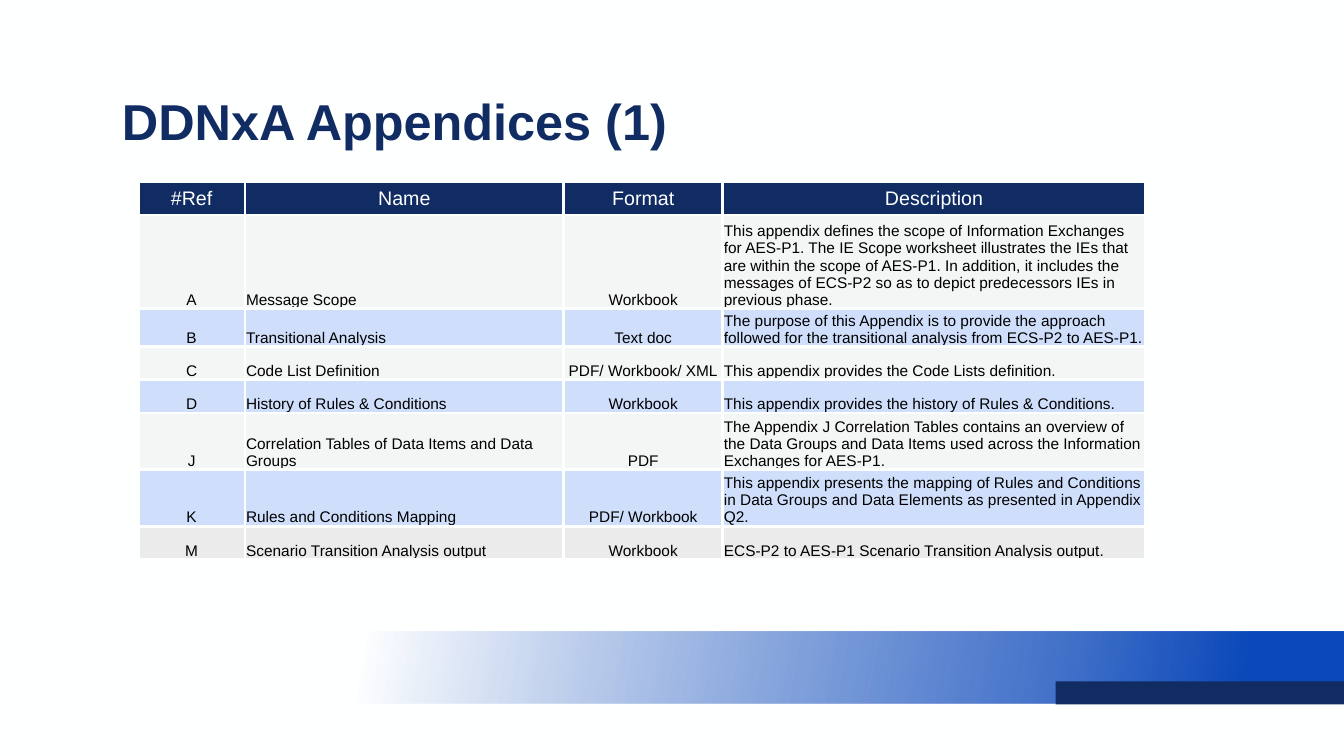
from dataclasses import dataclass

from lxml.etree import SubElement
from pptx import Presentation
from pptx.dml.color import RGBColor
from pptx.enum.shapes import MSO_SHAPE as Shape
from pptx.enum.text import MSO_ANCHOR as Anchor, PP_ALIGN as Align
from pptx.oxml.ns import qn
from pptx.util import Emu, Inches, Pt


@dataclass(frozen=True)
class Theme:
    """Colours, type sizes and line widths of the deck."""
    font: str = "Arial"
    paper: str = "FEFFFF"
    navy: str = "112C63"
    blue: str = "0C49BA"
    mid_blue: str = "3265C5"
    grey: str = "E7E6E6"
    pale_blue: str = "C4D8FB"
    ink: str = "000000"
    title_size: int = 36
    header_size: int = 14
    body_size: int = 11
    rule: float = 2.25


@dataclass(frozen=True)
class Box:
    """A rectangle in EMU."""
    left: int
    top: int
    width: int
    height: int

    def inner(self, left, top, width, height):
        """Return the box at the given percentages of this one."""
        return Box(Emu(int(self.left + self.width * left / 100)),
                   Emu(int(self.top + self.height * top / 100)),
                   Emu(int(self.width * width / 100)),
                   Emu(int(self.height * height / 100)))

    def frame(self):
        """Return left, top, width and height."""
        return self.left, self.top, self.width, self.height


THEME = Theme()
COLUMN_SHARES = (1.06, 3.16, 1.58, 4.19)
HEADINGS = ("#Ref", "Name", "Format", "Description")
APPENDICES = (
    ("A", "Message Scope", "Workbook",
     "This appendix defines the scope of Information Exchanges for AES-P1. "
     "The IE Scope worksheet illustrates the IEs that are within the scope of "
     "AES-P1. In addition, it includes the messages of ECS-P2 so as to depict "
     "predecessors IEs in previous phase."),
    ("B", "Transitional Analysis", "Text doc",
     "The purpose of this Appendix is to provide the approach followed for the "
     "transitional analysis from ECS-P2 to AES-P1."),
    ("C", "Code List Definition", "PDF/ Workbook/ XML",
     "This appendix provides the Code Lists definition."),
    ("D", "History of Rules & Conditions", "Workbook",
     "This appendix provides the history of Rules & Conditions."),
    ("J", "Correlation Tables of Data Items and Data Groups", "PDF",
     "The Appendix J Correlation Tables contains an overview of the Data Groups "
     "and Data Items used across the Information Exchanges for AES-P1."),
    ("K", "Rules and Conditions Mapping", "PDF/ Workbook",
     "This appendix presents the mapping of Rules and Conditions in Data Groups "
     "and Data Elements as presented in Appendix Q2."),
    ("M", "Scenario Transition Analysis output", "Workbook",
     "ECS-P2 to AES-P1 Scenario Transition Analysis output."),
)


def style_text(paragraph, size, color, bold=False, align=Align.LEFT):
    """Format every run of a paragraph."""
    paragraph.alignment = align
    for run in paragraph.runs:
        run.font.name = THEME.font
        run.font.size = Pt(size)
        run.font.bold = bold
        run.font.color.rgb = RGBColor.from_string(color)


def add_color(parent, color, opacity=100):
    """Append a colour element with its opacity in percent."""
    tint = SubElement(parent, qn("a:srgbClr"), val=color)
    if opacity < 100:
        SubElement(tint, qn("a:alpha"), val=str(opacity * 1000))


def add_bar(slide, box):
    """Add a plain rectangle without line or shadow."""
    bar = slide.shapes.add_shape(Shape.RECTANGLE, *box.frame())
    bar.shadow.inherit = False
    bar.line.fill.background()
    return bar


def add_footer(slide, box):
    """Draw the fading band and its navy corner block."""
    band = add_bar(slide, box)
    band.fill.gradient()
    gradient = band._element.spPr.find(qn("a:gradFill"))
    for child in list(gradient):
        gradient.remove(child)
    stops = SubElement(gradient, qn("a:gsLst"))
    for place, color, opacity in ((5, THEME.blue, 0), (72, THEME.mid_blue, 91),
                                  (90, THEME.blue, 100)):
        stop = SubElement(stops, qn("a:gs"), pos=str(place * 1000))
        add_color(stop, color, opacity)
    SubElement(gradient, qn("a:lin"), ang=str(10 * 60000), scaled="0")

    corner = add_bar(slide, box.inner(72, 69, 28, 32))
    corner.fill.solid()
    corner.fill.fore_color.rgb = RGBColor.from_string(THEME.navy)


def add_title(slide, box, words):
    """Place the slide title."""
    title = slide.shapes.add_textbox(*box.frame()).text_frame
    title.word_wrap = True
    title.text = words
    style_text(title.paragraphs[0], THEME.title_size, THEME.navy, bold=True)


def paint_cell(cell, color, opacity):
    """Give a cell its white rules and its fill."""
    properties = cell._tc.get_or_add_tcPr()
    for side in ("a:lnL", "a:lnR", "a:lnT", "a:lnB"):
        rule = SubElement(properties, qn(side), w=str(Pt(THEME.rule)))
        add_color(SubElement(rule, qn("a:solidFill")), THEME.paper)
    add_color(SubElement(properties, qn("a:solidFill")), color, opacity)


def fill_cell(cell, words, is_header, centred):
    """Write the text of a header or body cell."""
    cell.text = words
    cell.vertical_anchor = Anchor.MIDDLE if is_header else Anchor.BOTTOM
    if not is_header:
        cell.margin_left = cell.margin_right = cell.margin_top = Inches(0.01)
        cell.margin_bottom = 0
    style_text(cell.text_frame.paragraphs[0],
               THEME.header_size if is_header else THEME.body_size,
               THEME.paper if is_header else THEME.ink,
               align=Align.CENTER if centred else Align.LEFT)


def row_paint(index):
    """Return the fill colour and opacity of a table row."""
    if index == 0:
        return THEME.navy, 100
    if index == len(APPENDICES):
        return THEME.grey, 80
    return (THEME.grey, 40) if index % 2 else (THEME.pale_blue, 80)


def add_appendices(slide, box):
    """Build the table of appendices."""
    records = (HEADINGS, *APPENDICES)
    table = slide.shapes.add_table(len(records), len(HEADINGS), *box.frame()).table
    table.horz_banding = False
    for column, share in zip(table.columns, COLUMN_SHARES):
        column.width = Emu(int(box.width * share / sum(COLUMN_SHARES)))
    for index, (row, record) in enumerate(zip(table.rows, records)):
        is_header = index == 0
        row.height = Inches(0.27 if is_header else 0.33)
        for heading, cell, words in zip(HEADINGS, row.cells, record):
            centred = is_header or heading in ("#Ref", "Format")
            fill_cell(cell, words, is_header, centred)
            paint_cell(cell, *row_paint(index))


def main():
    """Build and save the slide."""
    deck = Presentation()
    deck.slide_width, deck.slide_height = Inches(13.33), Inches(7.5)
    slide = deck.slides.add_slide(deck.slide_layouts[6])
    slide.background.fill.solid()
    slide.background.fill.fore_color.rgb = RGBColor.from_string(THEME.paper)
    page = Box(0, 0, deck.slide_width, deck.slide_height)
    add_footer(slide, page.inner(23.4, 83.6, 76.6, 9.47))
    add_title(slide, page.inner(8.33, 11.2, 84.62, 9.47), "DDNxA Appendices (1)")
    add_appendices(slide, page.inner(10.28, 24, 74.94, 34.4))
    deck.save("out.pptx")


if __name__ == "__main__":
    main()
